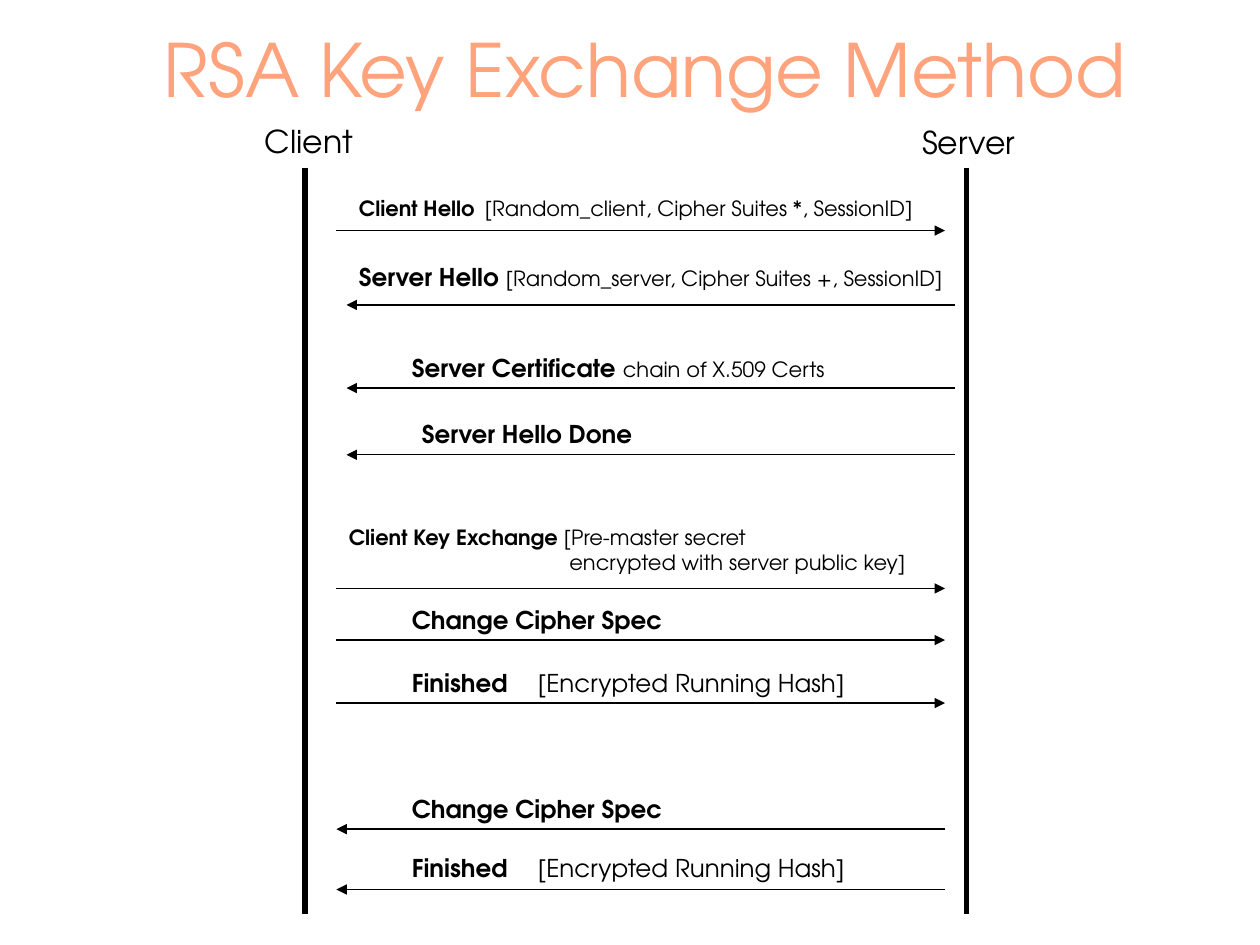
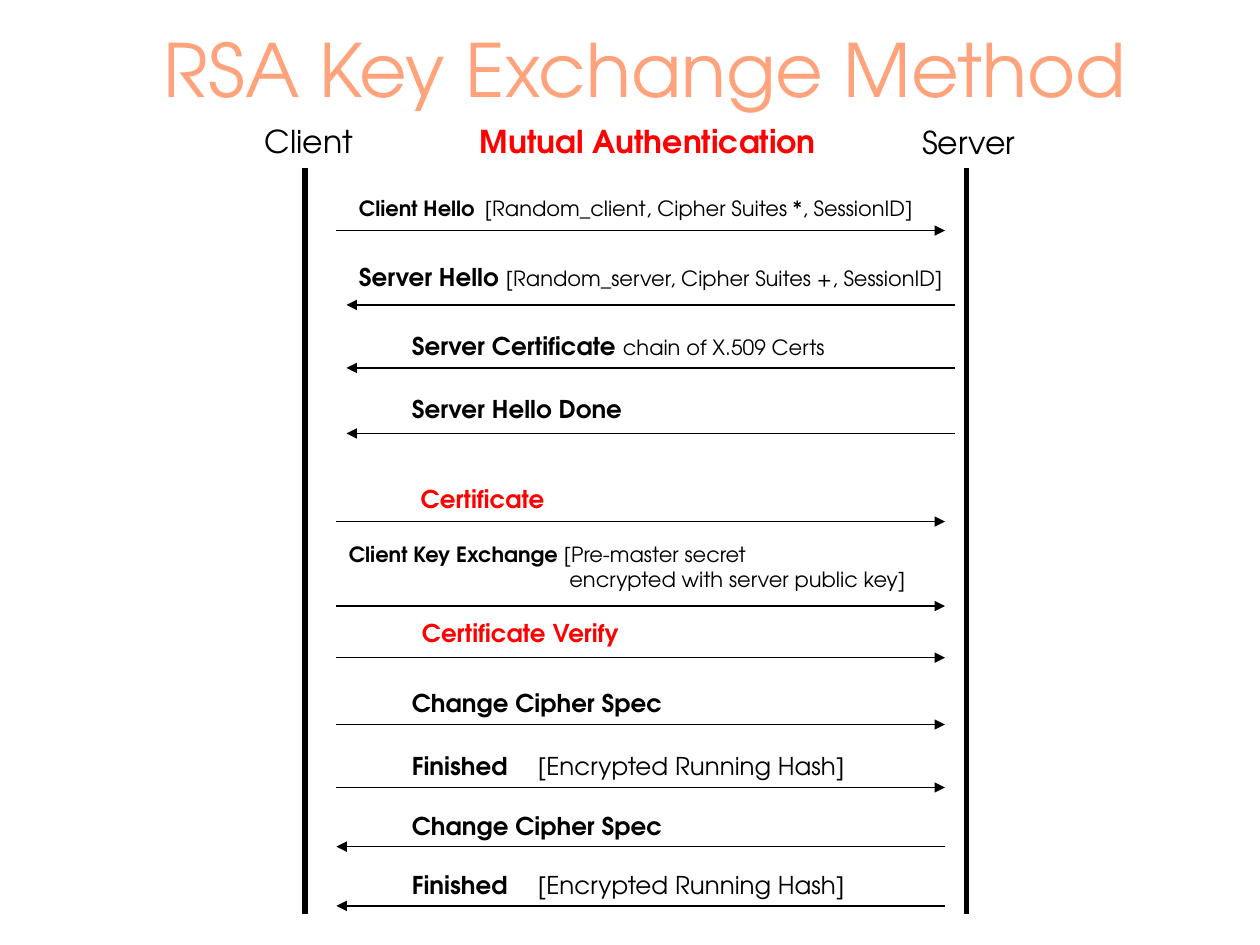
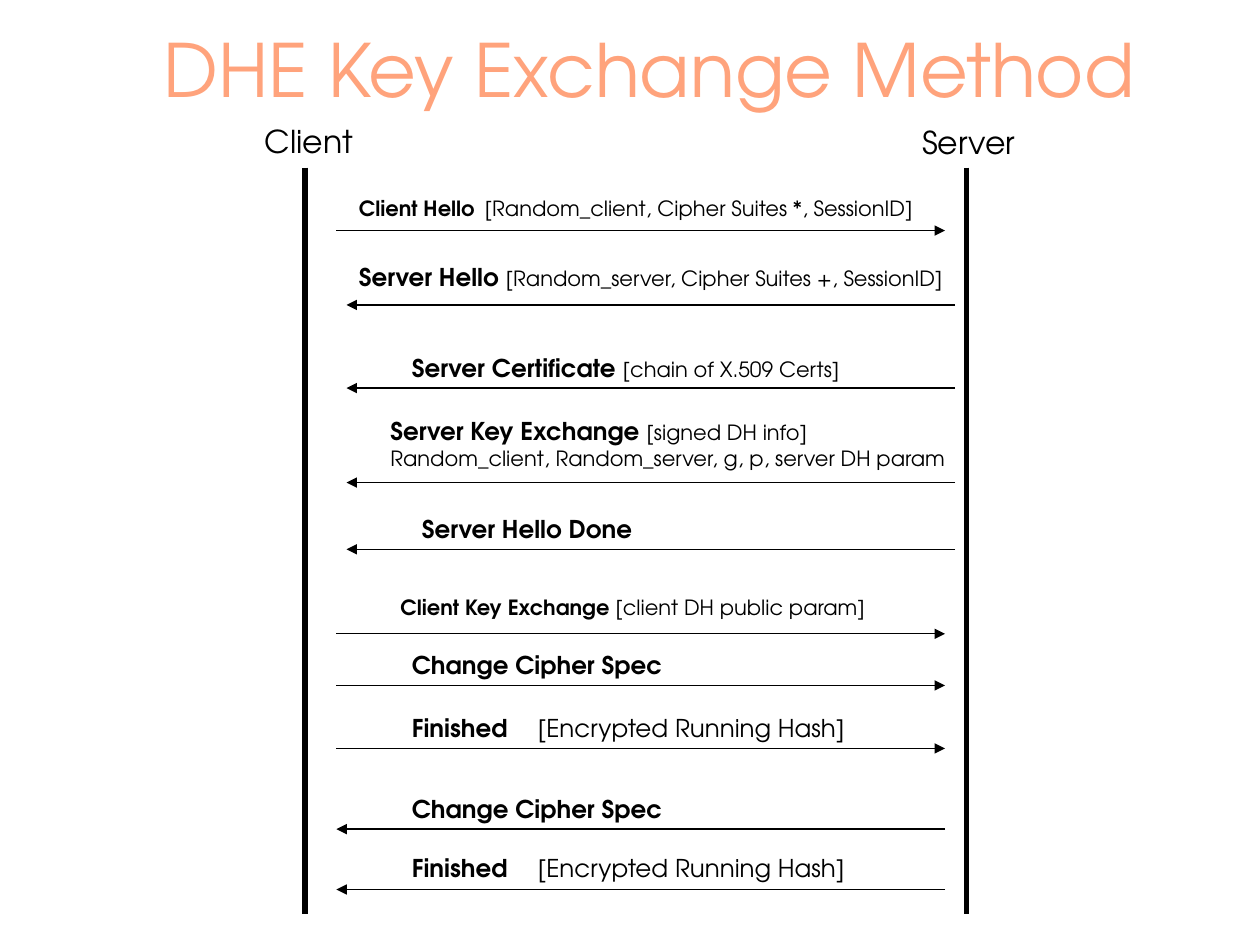
from lxml import etree
from pptx import Presentation
from pptx.dml.color import RGBColor
from pptx.enum.shapes import MSO_CONNECTOR
from pptx.enum.text import MSO_ANCHOR, MSO_AUTO_SIZE, PP_ALIGN
from pptx.oxml.ns import qn
from pptx.util import Inches, Pt

STRAIGHT = MSO_CONNECTOR.STRAIGHT
TOP = MSO_ANCHOR.TOP
LEFT = PP_ALIGN.LEFT
NO_AUTOFIT = MSO_AUTO_SIZE.NONE

FONT = "TeX Gyre Adventor"
BLACK = RGBColor(0x00, 0x00, 0x00)
RED = RGBColor(0xFF, 0x00, 0x00)
PEACH = RGBColor(0xFF, 0xA3, 0x7C)

TITLE_ONLY = 5
TITLE_BOX = (0.67, 0.14, 9, 1.53)
TITLE_INDENT = 0.53
LABEL_WIDTH = 4.92
LINE_HEIGHTS = {1: 0.64, 2: 0.82}

LIFELINE_TOP, LIFELINE_BOTTOM = 1.33, 7.25
# name, lifeline x, then left, top, width and height of the name
PARTIES = [
    ("Client", 2.42, (2.0, 0.92, 0.91, 0.4)),
    ("Server", 7.67, (7.22, 0.93, 0.95, 0.4)),
]

# Start and end x of an arrow
REQUEST = (2.67, 7.5)
RESPONSE = (7.58, 2.75)
CLOSING = (7.5, 2.67)

# Each line is (spans, indent, tab stop); each span is (text, size, bold, colour)
def heading(text, size=14, color=BLACK):
    return (text, size, True, color)


def detail(text, size=12):
    return (text, size, False, BLACK)


def line(*spans, indent=0, tab=None):
    return (spans, indent, tab)


CLIENT_HELLO = [line(heading("Client Hello\t", 12),
                     detail("[Random_client, Cipher Suites *, SessionID]"), tab=1.05)]
SERVER_HELLO = [line(heading("Server Hello "),
                     detail("[Random_server, Cipher Suites +, SessionID]"))]
SERVER_CERTIFICATE = [line(heading("Server Certificate "), detail("chain of X.509 Certs"))]
BRACKETED_CERTIFICATE = [line(heading("Server Certificate "), detail("[chain of X.509 Certs]"))]
SERVER_KEY_EXCHANGE = [
    line(heading("Server Key Exchange "), detail("[signed DH info]")),
    line(detail("Random_client, Random_server, g, p, server DH param")),
]
HELLO_DONE = [line(heading("Server Hello Done"))]
RSA_KEY_EXCHANGE = [
    line(heading("Client Key Exchange", 12), detail(" [Pre-master secret")),
    line(detail("encrypted with server public key]"), indent=1.75),
]
DH_KEY_EXCHANGE = [line(heading("Client Key Exchange", 12), detail(" [client DH public param]"))]
CERTIFICATE = [line(heading("Certificate", color=RED))]
CERTIFICATE_VERIFY = [line(heading("Certificate Verify", color=RED))]
CHANGE_CIPHER = [line(heading("Change Cipher Spec"))]
FINISHED = [line(heading("Finished\t"), detail("[Encrypted Running Hash]", 14), tab=0.86)]

# Each message is (lines, label left, label top, arrow y, arrow ends)
HELLOS = [
    (CLIENT_HELLO, 2.75, 1.5, 1.83, REQUEST),
    (SERVER_HELLO, 2.75, 2.03, 2.42, RESPONSE),
]
LATE_CLOSING = [
    (CHANGE_CIPHER, 3.17, 6.25, 6.58, CLOSING),
    (FINISHED, 3.17, 6.72, 7.06, CLOSING),
]
RSA_MESSAGES = HELLOS + [
    (SERVER_CERTIFICATE, 3.17, 2.75, 3.08, RESPONSE),
    (HELLO_DONE, 3.25, 3.28, 3.61, RESPONSE),
    (RSA_KEY_EXCHANGE, 2.67, 4.11, 4.67, REQUEST),
    (CHANGE_CIPHER, 3.17, 4.75, 5.08, REQUEST),
    (FINISHED, 3.17, 5.25, 5.58, REQUEST),
] + LATE_CLOSING
MUTUAL_MESSAGES = HELLOS + [
    (SERVER_CERTIFICATE, 3.17, 2.58, 2.92, RESPONSE),
    (HELLO_DONE, 3.17, 3.08, 3.44, RESPONSE),
    (CERTIFICATE, 3.24, 3.79, 4.14, REQUEST),
    (RSA_KEY_EXCHANGE, 2.67, 4.25, 4.81, REQUEST),
    (CERTIFICATE_VERIFY, 3.25, 4.86, 5.22, REQUEST),
    (CHANGE_CIPHER, 3.17, 5.41, 5.75, REQUEST),
    (FINISHED, 3.17, 5.91, 6.25, REQUEST),
    (CHANGE_CIPHER, 3.17, 6.39, 6.72, CLOSING),
    (FINISHED, 3.17, 6.86, 7.19, CLOSING),
]
DHE_MESSAGES = HELLOS + [
    (BRACKETED_CERTIFICATE, 3.17, 2.75, 3.08, RESPONSE),
    (SERVER_KEY_EXCHANGE, 3.0, 3.25, 3.83, RESPONSE),
    (HELLO_DONE, 3.25, 4.03, 4.36, RESPONSE),
    (DH_KEY_EXCHANGE, 3.08, 4.67, 5.03, REQUEST),
    (CHANGE_CIPHER, 3.17, 5.11, 5.44, REQUEST),
    (FINISHED, 3.17, 5.61, 5.94, REQUEST),
] + LATE_CLOSING

SUBTITLE = [line(heading("Mutual Authentication", 18, RED))]
SLIDES = [
    ("RSA Key Exchange Method", None, RSA_MESSAGES),
    ("RSA Key Exchange Method", SUBTITLE, MUTUAL_MESSAGES),
    ("DHE Key Exchange Method", None, DHE_MESSAGES),
]


def add_span(para, text, size, bold, color):
    span = para.add_run()
    span.text = text
    span.font.name = FONT
    span.font.size = Pt(size)
    span.font.bold = bold
    span.font.color.rgb = color


def format_para(para, indent, tab):
    """Set the left indent and, if given, one tab stop, both in inches."""
    properties = para._p.get_or_add_pPr()
    properties.set("marL", str(Inches(indent)))
    properties.set("indent", "0")
    if tab:
        stops = etree.SubElement(properties, qn("a:tabLst"))
        etree.SubElement(stops, qn("a:tab"), pos=str(Inches(tab)), algn="l")


def add_label(page, lines, left, top, width, height, wrap=True):
    box = page.shapes.add_textbox(Inches(left), Inches(top), Inches(width), Inches(height))
    frame = box.text_frame
    frame.word_wrap = wrap
    for number, (spans, indent, tab) in enumerate(lines):
        para = frame.add_paragraph() if number else frame.paragraphs[0]
        format_para(para, indent, tab)
        for span in spans:
            add_span(para, *span)


def add_line(page, start, end, width, arrow=False):
    connector = page.shapes.add_connector(STRAIGHT, *map(Inches, start + end))
    connector.line.color.rgb = BLACK
    connector.line.width = Pt(width)
    if arrow:
        etree.SubElement(connector.line._get_or_add_ln(), qn("a:tailEnd"), type="triangle")
    etree.SubElement(connector._element.spPr, qn("a:effectLst"))


def set_title(page, text):
    title = page.shapes.title
    title.left, title.top, title.width, title.height = map(Inches, TITLE_BOX)
    frame = title.text_frame
    frame.word_wrap = True
    frame.auto_size = NO_AUTOFIT
    frame.vertical_anchor = TOP
    para = frame.paragraphs[0]
    para.alignment = LEFT
    format_para(para, TITLE_INDENT, None)
    add_span(para, text, 42, False, PEACH)


def add_parties(page):
    for name, x, place in PARTIES:
        add_line(page, (x, LIFELINE_TOP), (x, LIFELINE_BOTTOM), 3)
        add_label(page, [line(detail(name, 18))], *place, wrap=False)


def add_message(page, lines, left, top, arrow_y, ends):
    start, end = ends
    add_line(page, (start, arrow_y), (end, arrow_y), 0.75, arrow=True)
    add_label(page, lines, left, top, LABEL_WIDTH, LINE_HEIGHTS[len(lines)])


def main():
    deck = Presentation()
    deck.slide_width, deck.slide_height = Inches(10), Inches(7.5)
    for title, subtitle, messages in SLIDES:
        page = deck.slides.add_slide(deck.slide_layouts[TITLE_ONLY])
        set_title(page, title)
        add_parties(page)
        if subtitle:
            add_label(page, subtitle, 3.71, 0.92, LABEL_WIDTH, 0.71)
        for message in messages:
            add_message(page, *message)
    deck.save("out.pptx")


if __name__ == "__main__":
    main()
